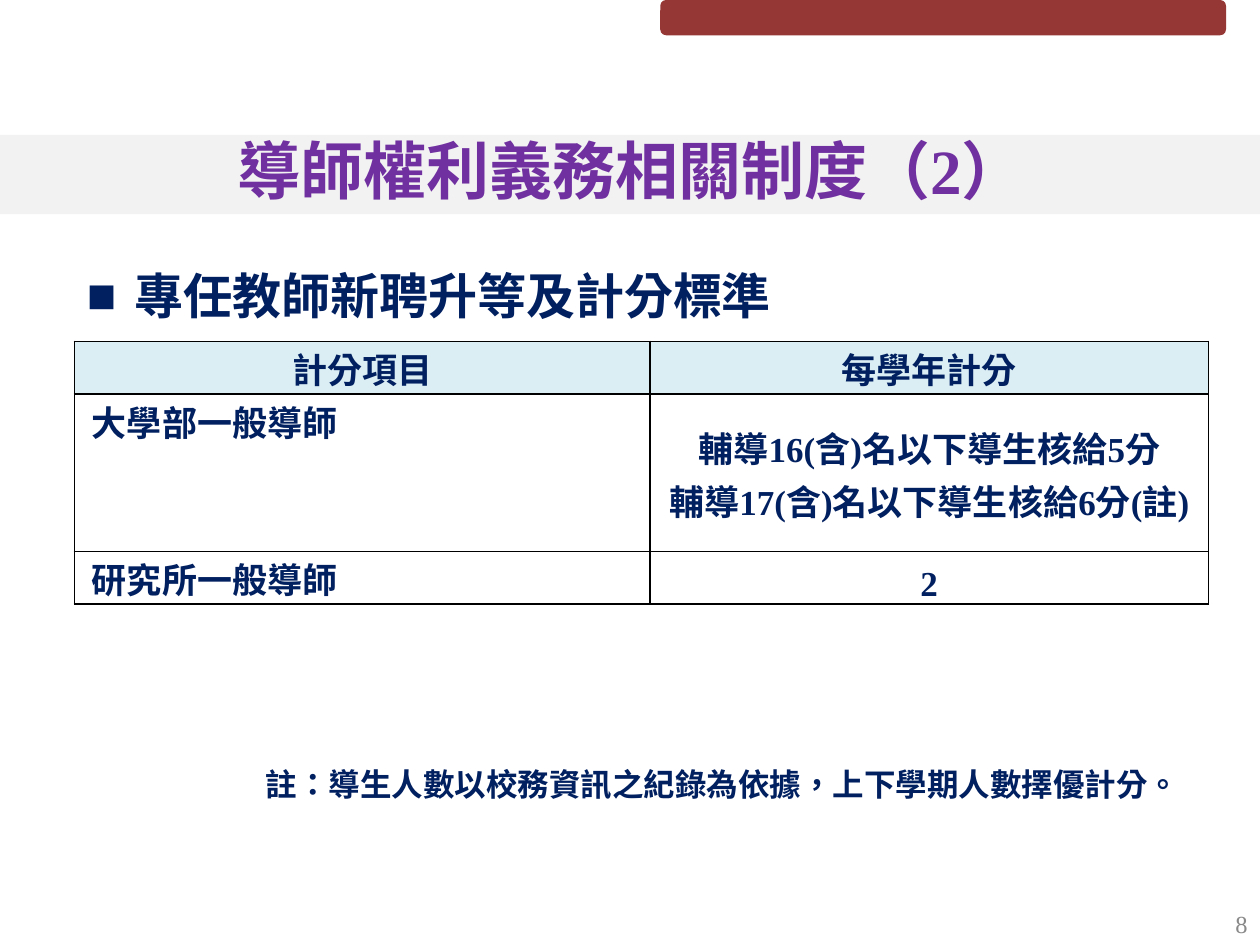
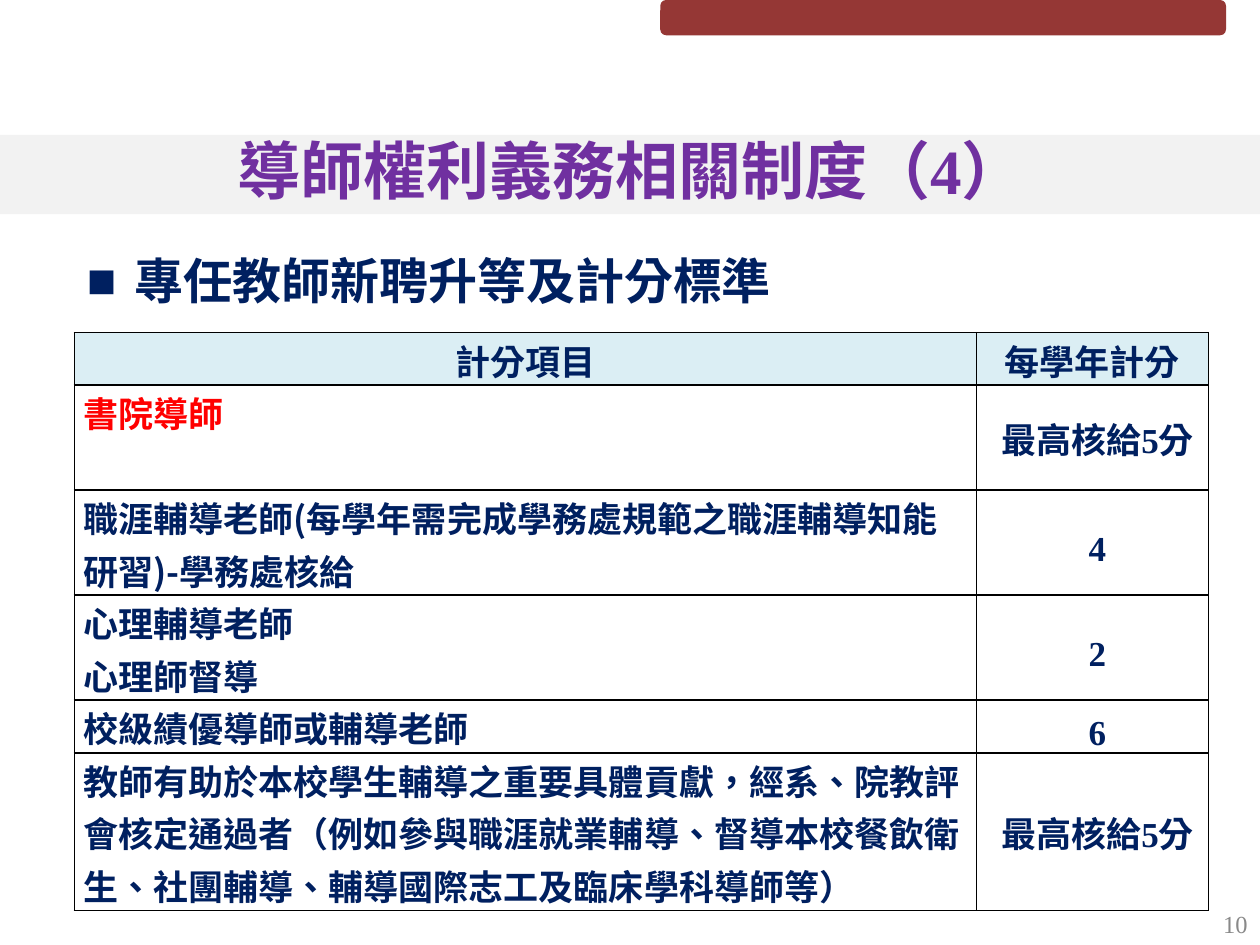
"""Build two slides on the scoring of mentor duties."""
from dataclasses import dataclass
from typing import Optional

from lxml.etree import SubElement
from pptx import Presentation
from pptx.dml.color import RGBColor
from pptx.enum.lang import MSO_LANGUAGE_ID
from pptx.enum.shapes import MSO_SHAPE
from pptx.enum.text import MSO_ANCHOR, MSO_AUTO_SIZE, PP_ALIGN
from pptx.oxml.ns import qn
from pptx.util import Inches, Pt

LATIN_FONT = "Times New Roman"
CHINESE_FONT = "Noto Sans CJK SC"
PURPLE, NAVY, RED = "7030A0", "002060", "FF0000"
GRAY, MAROON, PALE_GRAY, PALE_BLUE = "898989", "953735", "F2F2F2", "DBEEF4"
BLACK = "000000"
LINE_HEIGHT = Pt(30)
FIRST_LINE_INDENT = Inches(0.08)
HEADINGS = ("計分項目", "每學年計分")
TOPIC = "專任教師新聘升等及計分標準"


@dataclass(frozen=True)
class Band:
    preset: MSO_SHAPE
    left: float
    top: float
    width: float
    height: float
    color: str


@dataclass(frozen=True)
class ScoreRow:
    items: tuple[str, ...]
    scores: tuple[str, ...]
    lines: int
    item_color: str = NAVY
    item_anchor: MSO_ANCHOR = MSO_ANCHOR.TOP


@dataclass(frozen=True)
class ScoreSlide:
    number: int
    title: str
    topic_top: float
    table_top: float
    column_widths: tuple[float, float]
    margin: float
    indented_column: int
    rows: tuple[ScoreRow, ...]
    note: Optional[str] = None


BANDS = (
    Band(MSO_SHAPE.ROUNDED_RECTANGLE, 5.24, 0, 4.49, 0.28, MAROON),
    Band(MSO_SHAPE.RECTANGLE, 0, 1.07, 10, 0.63, PALE_GRAY),
)

SLIDES = (
    ScoreSlide(
        8, "導師權利義務相關制度（2）", 2.06, 2.71, (4.57, 4.43), 0.06, 0,
        (
            ScoreRow(("大學部一般導師",),
                     ("輔導16(含)名以下導生核給5分", "輔導17(含)名以下導生核給6分(註)"), 3),
            ScoreRow(("研究所一般導師",), ("2",), 1),
        ),
        "註：導生人數以校務資訊之紀錄為依據，上下學期人數擇優計分。",
    ),
    ScoreSlide(
        10, "導師權利義務相關制度（4）", 1.94, 2.64, (7.16, 1.84), 0.07, 1,
        (
            ScoreRow(("書院導師",), ("最高核給5分",), 2, RED),
            ScoreRow(("職涯輔導老師(每學年需完成學務處規範之職涯輔導知能研習)-學務處核給",),
                     ("4",), 2),
            ScoreRow(("心理輔導老師", "心理師督導"), ("2",), 2),
            ScoreRow(("校級績優導師或輔導老師",), ("6",), 1, item_anchor=MSO_ANCHOR.MIDDLE),
            ScoreRow(("教師有助於本校學生輔導之重要具體貢獻，經系、院教評會核定通過者"
                      "（例如參與職涯就業輔導、督導本校餐飲衛生、社團輔導、"
                      "輔導國際志工及臨床學科導師等）",), ("最高核給5分",), 3),
        ),
    ),
)


def rgb(color: str) -> RGBColor:
    return RGBColor.from_string(color)


def format_paragraph(paragraph, size: float, color: str, align: PP_ALIGN,
                     bold: bool = True, latin: str = LATIN_FONT) -> None:
    paragraph.alignment = align
    font = paragraph.font
    font.size, font.bold, font.name = Pt(size), bold, latin
    font.color.rgb = rgb(color)
    font.language_id = MSO_LANGUAGE_ID.TRADITIONAL_CHINESE
    defaults = paragraph._p.pPr.find(qn("a:defRPr"))
    SubElement(defaults, qn("a:ea"), typeface=CHINESE_FONT)


def place(shape, left: float, top: float, width: float, height: float) -> None:
    shape.left, shape.top = Inches(left), Inches(top)
    shape.width, shape.height = Inches(width), Inches(height)


def draw_band(slide, band: Band) -> None:
    shape = slide.shapes.add_shape(
        band.preset, Inches(band.left), Inches(band.top),
        Inches(band.width), Inches(band.height))
    shape.shadow.inherit = False
    shape.fill.solid()
    shape.fill.fore_color.rgb = rgb(band.color)
    shape.line.fill.background()
    slide.shapes._spTree.insert(2, shape._element)


def draw_text_box(slide, text: str, left: float, top: float, width: float):
    box = slide.shapes.add_textbox(
        Inches(left), Inches(top), Inches(width), Inches(0.4))
    box.text_frame.word_wrap = True
    box.text_frame.text = text
    return box.text_frame


def write_title(slide, text: str) -> None:
    title = slide.shapes.title
    place(title, 0.83, 0.99, 8.36, 0.71)
    frame = title.text_frame
    frame.text = text
    frame.auto_size = MSO_AUTO_SIZE.NONE
    frame.vertical_anchor = MSO_ANCHOR.MIDDLE
    format_paragraph(frame.paragraphs[0], 36, PURPLE, PP_ALIGN.CENTER)


def write_topic(slide, top: float) -> None:
    body = slide.placeholders[1]
    place(body, 0.59, top, 8.67, 4.37)
    frame = body.text_frame
    frame.text = TOPIC
    frame.auto_size = MSO_AUTO_SIZE.NONE
    paragraph = frame.paragraphs[0]
    paragraph.space_before = Pt(0)
    properties = paragraph._p.get_or_add_pPr()
    properties.set("marL", str(Inches(0.38)))
    properties.set("indent", str(-Inches(0.38)))
    SubElement(properties, qn("a:buChar"), char="■")
    format_paragraph(paragraph, 28, NAVY, PP_ALIGN.JUSTIFY)


def draw_borders(cell) -> None:
    properties = cell._tc.get_or_add_tcPr()
    for position, side in enumerate(("lnL", "lnR", "lnT", "lnB")):
        line = SubElement(properties, qn(f"a:{side}"), w=str(Pt(1)))
        fill = SubElement(line, qn("a:solidFill"))
        SubElement(fill, qn("a:srgbClr"), val=BLACK)
        properties.insert(position, line)


def fill_cell(cell, texts: tuple[str, ...], align: PP_ALIGN, color: str = NAVY,
              anchor: MSO_ANCHOR = MSO_ANCHOR.MIDDLE, margin: float = 0.06,
              latin: str = CHINESE_FONT, indented: bool = False,
              background: Optional[str] = None) -> None:
    cell.margin_left = cell.margin_right = Inches(margin)
    cell.margin_top = cell.margin_bottom = 0
    cell.vertical_anchor = anchor
    if background:
        cell.fill.solid()
        cell.fill.fore_color.rgb = rgb(background)
    else:
        cell.fill.background()
    draw_borders(cell)
    cell.text_frame.text = "\n".join(texts)
    for paragraph in cell.text_frame.paragraphs:
        paragraph.line_spacing = LINE_HEIGHT
        if indented:
            paragraph._p.get_or_add_pPr().set("indent", str(FIRST_LINE_INDENT))
        format_paragraph(paragraph, 20, color, align, latin=latin)


def draw_score_table(slide, content: ScoreSlide) -> None:
    line_counts = [1] + [row.lines for row in content.rows]
    table = slide.shapes.add_table(
        len(line_counts), len(HEADINGS), Inches(0.59), Inches(content.table_top),
        Inches(sum(content.column_widths)), LINE_HEIGHT * sum(line_counts)).table
    table.first_row = table.horz_banding = False
    for column, width in zip(table.columns, content.column_widths):
        column.width = Inches(width)
    for table_row, lines in zip(table.rows, line_counts):
        table_row.height = LINE_HEIGHT * lines
    for index, heading in enumerate(HEADINGS):
        fill_cell(table.cell(0, index), (heading,), PP_ALIGN.CENTER,
                  background=PALE_BLUE)
    for index, row in enumerate(content.rows, start=1):
        fill_cell(table.cell(index, 0), row.items, PP_ALIGN.LEFT, row.item_color,
                  row.item_anchor, content.margin,
                  indented=content.indented_column == 0)
        fill_cell(table.cell(index, 1), row.scores, PP_ALIGN.CENTER,
                  margin=content.margin, latin=LATIN_FONT,
                  indented=content.indented_column == 1)


def build_slide(presentation, content: ScoreSlide) -> None:
    slide = presentation.slides.add_slide(presentation.slide_layouts[1])
    for band in BANDS:
        draw_band(slide, band)
    write_title(slide, content.title)
    write_topic(slide, content.topic_top)
    draw_score_table(slide, content)
    if content.note:
        note = draw_text_box(slide, content.note, 2.01, 6.02, 7.8)
        format_paragraph(note.paragraphs[0], 18, NAVY, PP_ALIGN.LEFT,
                         latin=CHINESE_FONT)
    number = draw_text_box(slide, str(content.number), 7.67, 7.13, 2.33)
    number.vertical_anchor = MSO_ANCHOR.MIDDLE
    format_paragraph(number.paragraphs[0], 14, GRAY, PP_ALIGN.RIGHT, bold=False)


def main() -> None:
    presentation = Presentation()
    presentation.slide_width, presentation.slide_height = Inches(10), Inches(7.5)
    for content in SLIDES:
        build_slide(presentation, content)
    presentation.save("out.pptx")


if __name__ == "__main__":
    main()
